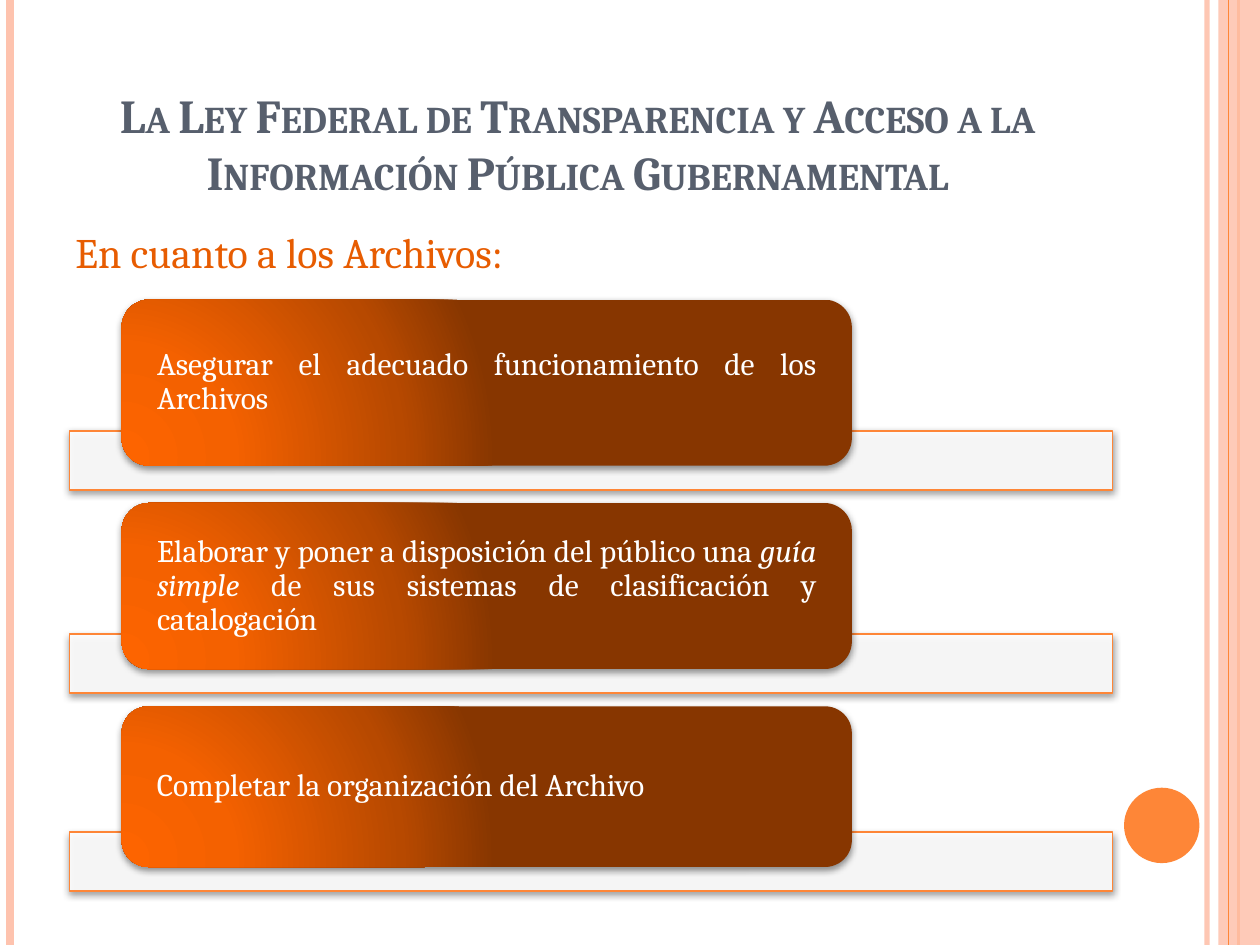
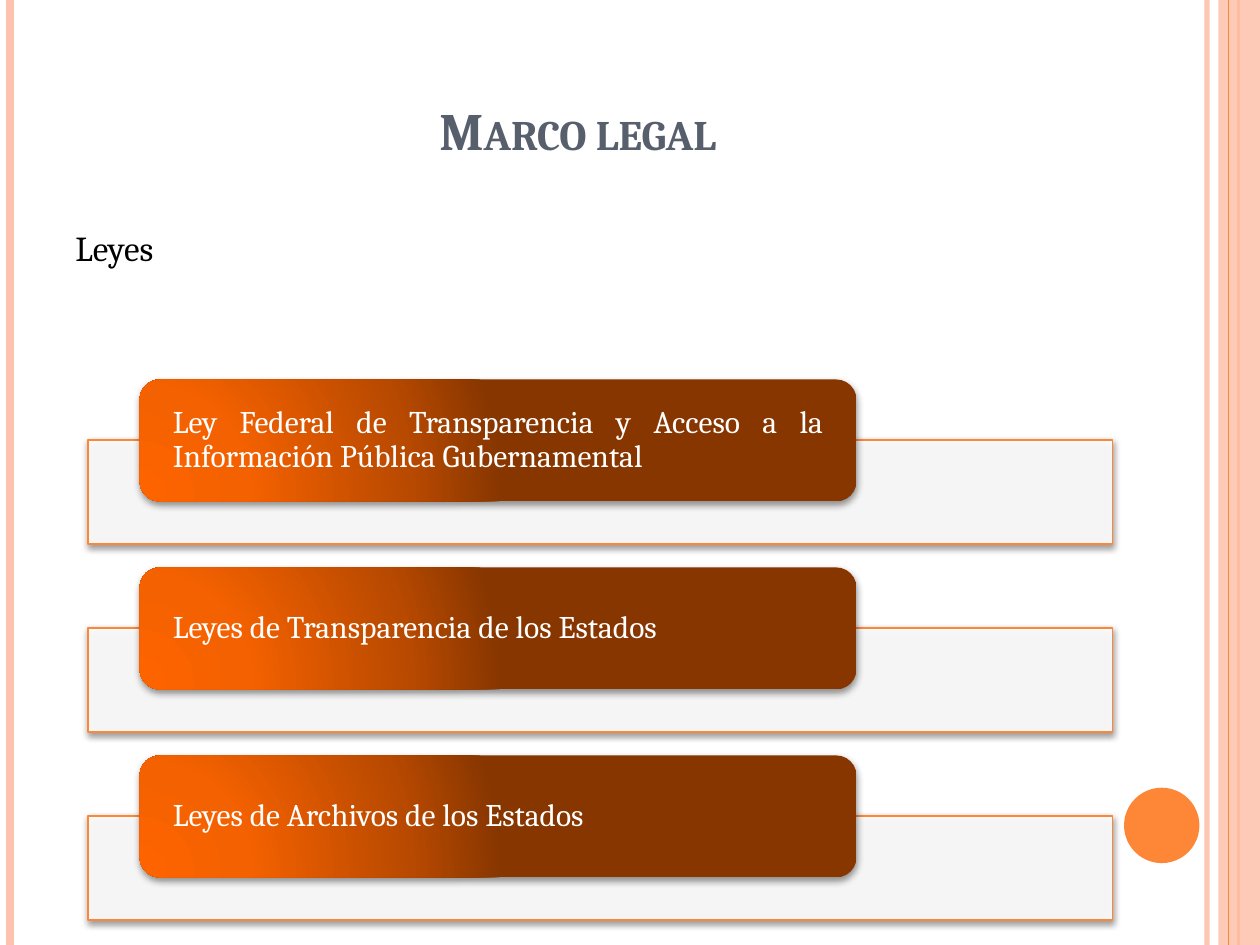
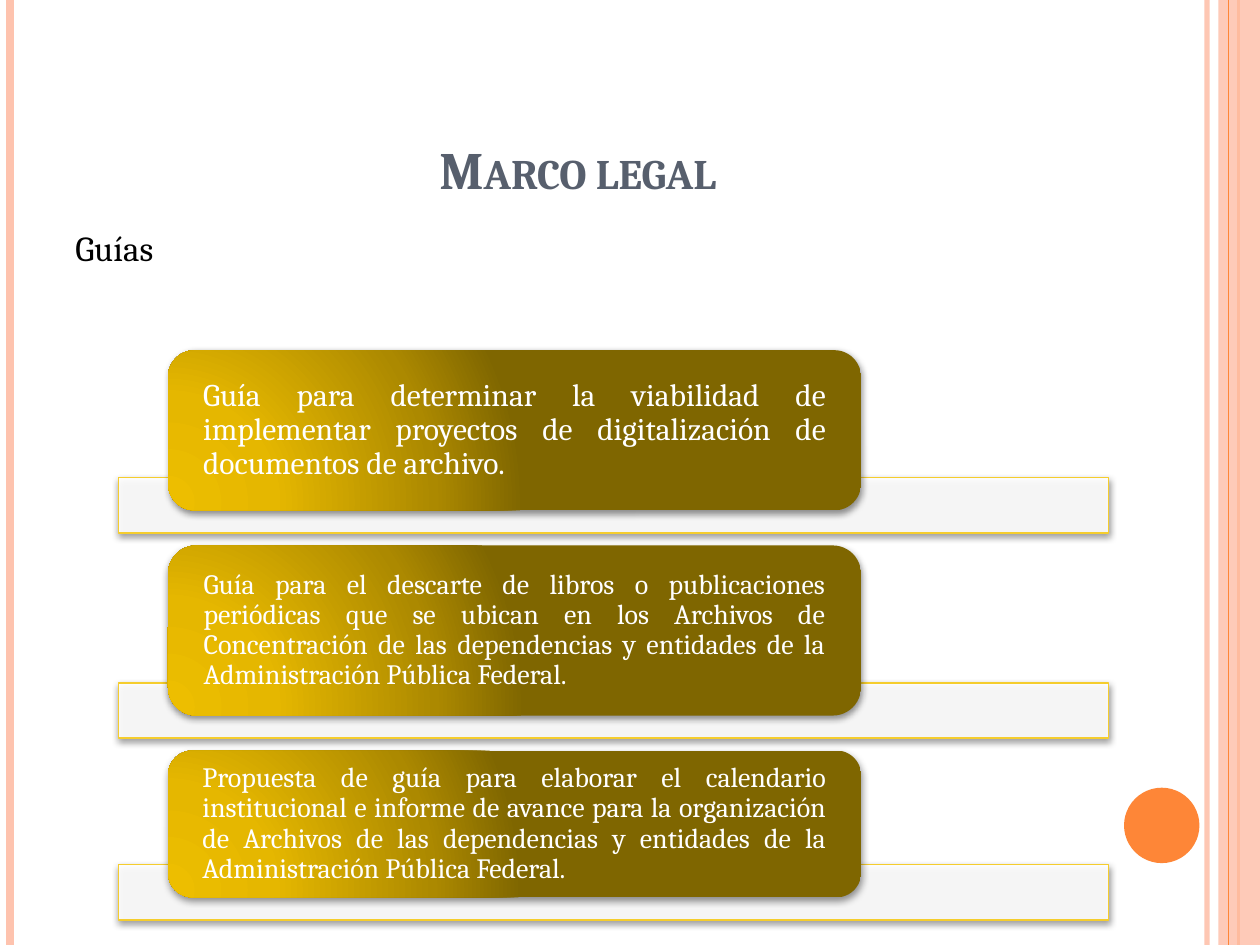
from lxml.etree import SubElement
from pptx import Presentation
from pptx.dml.color import RGBColor
from pptx.enum.shapes import MSO_CONNECTOR, MSO_SHAPE
from pptx.enum.text import MSO_ANCHOR as ANCHOR, PP_ALIGN as ALIGN
from pptx.oxml.ns import qn
from pptx.util import Cm, Pt

COLORS = {
    "white": "FFFFFF",
    "black": "000000",
    "title": "575F6D",
    "heading": "E75C01",
    "orange": "FE8637",
    "peach": "FEC3AE",
    "yellow": "F5CD2D",
}
# Gradient stops of the labels: position in percent, colour
GRADIENTS = {
    "orange": [(0, "FD6400"), (30, "F46100"), (75, "B74900"), (100, "873600")],
    "yellow": [(0, "EDBE00"), (30, "E5B700"), (75, "AC8900"), (100, "7F6600")],
}
FONT = "Cambria"
WIDTH, HEIGHT = 25.4, 19.05

# Label geometry relative to the bar behind it
LABEL_INDENT, LABEL_WIDTH = 0.05, 0.7
OVERLAP, GAP = 0.59, 0.22


def rgb(name):
    return RGBColor.from_string(COLORS[name])


def add_node(parent, tag, **attributes):
    return SubElement(parent, qn(tag), {key: str(value) for key, value in attributes.items()})


def set_alpha(properties, percent):
    """Make the solid fill held by an spPr or ln element translucent."""
    color = properties.find(qn("a:solidFill")).find(qn("a:srgbClr"))
    add_node(color, "a:alpha", val=percent * 1000)


def add_shadow(shape):
    effects = shape.element.spPr.find(qn("a:effectLst"))
    shadow = add_node(effects, "a:outerShdw", blurRad=Pt(4), dist=Pt(1.6),
                      dir=90 * 60000, rotWithShape=0)
    color = add_node(shadow, "a:srgbClr", val=COLORS["black"])
    add_node(color, "a:alpha", val=42000)


def set_radial_gradient(shape, stops):
    properties = shape.element.spPr
    gradient = add_node(properties, "a:gradFill", rotWithShape=1)
    stop_list = add_node(gradient, "a:gsLst")
    for position, color in stops:
        stop = add_node(stop_list, "a:gs", pos=position * 1000)
        add_node(stop, "a:srgbClr", val=color)
    circle = add_node(gradient, "a:path", path="circle")
    add_node(circle, "a:fillToRect", l=5000, t=100000, r=120000, b=10000)
    properties.find(qn("a:prstGeom")).addnext(gradient)


def add_plain_shape(slide, kind, left, top, width, height, fill=None, alpha=None, line=None):
    shape = slide.shapes.add_shape(kind, Cm(left), Cm(top), Cm(width), Cm(height))
    shape.shadow.inherit = False
    if fill:
        shape.fill.solid()
        shape.fill.fore_color.rgb = rgb(fill)
    if alpha:
        set_alpha(shape.element.spPr, alpha)
    if line:
        shape.line.color.rgb = rgb(line)
        shape.line.width = Pt(1)
    else:
        shape.line.fill.background()
    return shape


def add_vertical_line(slide, x, color, width, alpha=None):
    line = slide.shapes.add_connector(MSO_CONNECTOR.STRAIGHT, Cm(x), 0, Cm(x), Cm(HEIGHT))
    line.line.color.rgb = rgb(color)
    line.line.width = Pt(width)
    if alpha:
        set_alpha(line.line._get_or_add_ln(), alpha)
    add_node(line.element.spPr, "a:effectLst")


def write_text(frame, text, size, color, align=ALIGN.JUSTIFY, anchor=ANCHOR.TOP,
               bold=False, small_caps=False, line_spacing=None, space_before=0):
    """Fill a text frame with one paragraph; parts between asterisks are italic."""
    frame.word_wrap = True
    frame.vertical_anchor = anchor
    paragraph = frame.paragraphs[0]
    paragraph.alignment = align
    paragraph.line_spacing = line_spacing
    paragraph.space_before = Pt(space_before)
    for index, part in enumerate(text.split("*")):
        run = paragraph.add_run()
        run.text = part
        font = run.font
        font.name, font.size, font.bold = FONT, Pt(size), bold
        font.italic = index % 2 == 1
        font.color.rgb = rgb(color)
        if small_caps:
            font._element.set("cap", "small")


def add_text(slide, left, top, width, height, text, **text_format):
    box = slide.shapes.add_textbox(Cm(left), Cm(top), Cm(width), Cm(height))
    write_text(box.text_frame, text, **text_format)


def add_frame(slide):
    """Draw the side lines, the right band and the disc."""
    add_vertical_line(slide, 24.33, "peach", 3, alpha=93)
    add_vertical_line(slide, 0.2, "peach", 4.5)
    add_vertical_line(slide, 24.97, "orange", 1.5)
    add_plain_shape(slide, MSO_SHAPE.RECTANGLE, 24.56, 0, WIDTH - 24.56, HEIGHT, "peach", 87)
    add_vertical_line(slide, 24.77, "orange", 0.75)
    add_plain_shape(slide, MSO_SHAPE.OVAL, 22.66, 15.88, 1.52, 1.52, "orange")


def add_content_slide(presentation, title, heading, title_size=30, title_height=3.4,
                      heading_size=20, heading_color="black"):
    slide = presentation.slides.add_slide(presentation.slide_layouts[6])
    add_frame(slide)
    add_text(slide, 1.27, 0.76, 20.75, title_height, title, size=title_size, color="title",
             align=ALIGN.CENTER, anchor=ANCHOR.BOTTOM, bold=True, small_caps=True)
    add_text(slide, 1.27, 4.45, 21.16, 13.54, heading, size=heading_size,
             color=heading_color, space_before=6)
    return slide


def add_label(slide, left, top, width, height, text, size, theme):
    label = add_plain_shape(slide, MSO_SHAPE.ROUNDED_RECTANGLE, left, top, width, height)
    set_radial_gradient(label, GRADIENTS[theme])
    add_shadow(label)
    frame = label.text_frame
    frame.margin_left = frame.margin_right = Cm(0.55)
    frame.margin_top = frame.margin_bottom = 0
    write_text(frame, text, size, "white", anchor=ANCHOR.MIDDLE, line_spacing=0.9)


def add_label_list(slide, left, top, width, bar_height, items, theme="orange"):
    """Stack labels, each over its bar; items are (text, size, label height)."""
    for text, size, label_height in items:
        bar_top = top + label_height - OVERLAP * bar_height
        bar = add_plain_shape(slide, MSO_SHAPE.RECTANGLE, left, bar_top, width, bar_height,
                              "white", 90, line=theme)
        add_shadow(bar)
        add_label(slide, left + LABEL_INDENT * width, top, LABEL_WIDTH * width, label_height,
                  text, size, theme)
        top = bar_top + (1 + GAP) * bar_height


def main():
    presentation = Presentation()
    presentation.slide_width, presentation.slide_height = Cm(WIDTH), Cm(HEIGHT)

    slide = add_content_slide(
        presentation,
        "La Ley Federal de Transparencia y Acceso a la Información Pública Gubernamental",
        "En cuanto a los Archivos:",
        title_size=27, heading_size=24, heading_color="heading")
    add_label_list(slide, 1.4, 6.04, 21.03, 1.19, [
        ("Asegurar el adecuado funcionamiento de los Archivos", 18, 3.35),
        ("Elaborar y poner a disposición del público una *guía simple* de sus sistemas "
         "de clasificación y catalogación", 18, 3.35),
        ("Completar la organización del Archivo", 18, 3.24),
    ])

    slide = add_content_slide(presentation, "Marco legal", "Leyes", title_height=2.62)
    laws = [
        "Ley Federal de Transparencia y Acceso a la Información Pública Gubernamental",
        "Leyes de Transparencia de los Estados",
        "Leyes de Archivos de los Estados",
    ]
    add_label_list(slide, 1.78, 7.65, 20.65, 2.11, [(law, 18, 2.46) for law in laws])

    slide = add_content_slide(presentation, "Marco legal", "Guías")
    add_label_list(slide, 2.39, 7.06, 19.96, 1.12, [
        ("Guía para determinar la viabilidad de implementar proyectos de digitalización "
         "de documentos de archivo.", 18, 3.23),
        ("Guía para el descarte de libros o publicaciones periódicas que se ubican en los "
         "Archivos de Concentración de las dependencias y entidades de la Administración "
         "Pública Federal.", 16, 3.43),
        ("Propuesta de guía para elaborar el calendario institucional e informe de avance "
         "para la organización de Archivos de las dependencias y entidades de la "
         "Administración Pública Federal.", 16, 2.96),
    ], theme="yellow")

    presentation.save("out.pptx")


if __name__ == "__main__":
    main()
